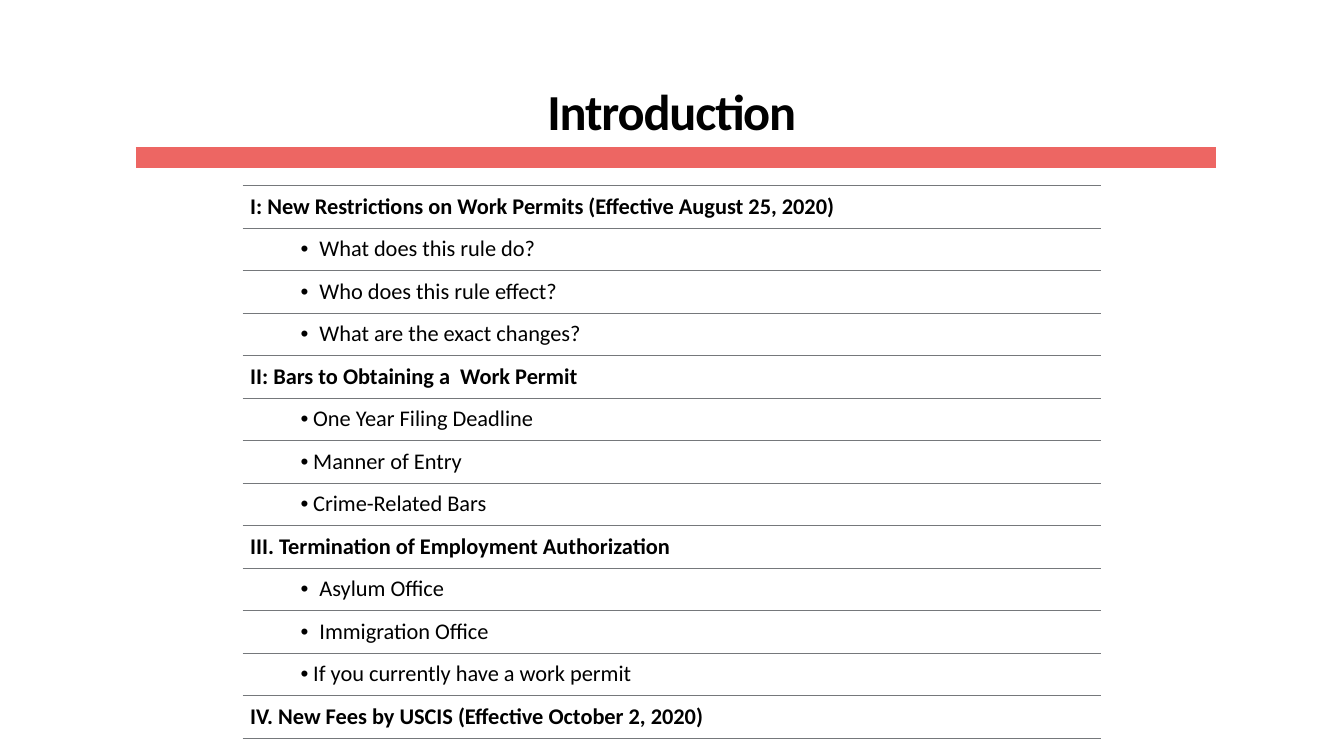
from lxml import etree
from pptx import Presentation
from pptx.dml.color import RGBColor
from pptx.enum.shapes import MSO_CONNECTOR
from pptx.enum.text import MSO_ANCHOR, PP_ALIGN
from pptx.oxml.ns import qn
from pptx.util import Pt

STRAIGHT = MSO_CONNECTOR.STRAIGHT
CENTER = PP_ALIGN.CENTER
MIDDLE = MSO_ANCHOR.MIDDLE
BOTTOM = MSO_ANCHOR.BOTTOM

BLACK, RED, GRAY = "000000", "ED6663", "75787B"
ROW_HEIGHT = 30.36
SIDE_MARGIN, EDGE_MARGIN = Pt(5.4), Pt(5.2)

# Agenda rows: text, then left margin and hanging indent of the bullet in points
WIDE, NARROW = (49.5, 13.5), (45, 9)
AGENDA = [
    ("I: New Restrictions on Work Permits (Effective August 25, 2020)", None),
    ("What does this rule do?", WIDE),
    ("Who does this rule effect?", WIDE),
    ("What are the exact changes?", WIDE),
    ("II: Bars to Obtaining a  Work Permit", None),
    ("One Year Filing Deadline", NARROW),
    ("Manner of Entry", NARROW),
    ("Crime-Related Bars", NARROW),
    ("III. Termination of Employment Authorization", None),
    ("Asylum Office", WIDE),
    ("Immigration Office", WIDE),
    ("If you currently have a work permit", NARROW),
    ("IV. New Fees by USCIS (Effective October 2, 2020)", None),
]


def color(hex_string):
    return RGBColor.from_string(hex_string)


def write(paragraph, text, size=16, bold=False, spacing=0):
    run = paragraph.add_run()
    run.text = text
    run.font.name = "Calibri"
    run.font.size = Pt(size)
    run.font.bold = bold
    run.font.color.rgb = color(BLACK)
    if spacing:
        run.font._element.set("spc", str(round(spacing * 100)))


presentation = Presentation()
presentation.slide_width = Pt(960)
presentation.slide_height = Pt(540)
slide = presentation.slides.add_slide(presentation.slide_layouts[6])

# Title
title = slide.shapes.add_textbox(Pt(25.8), Pt(28.3), Pt(908), Pt(72.7))
frame = title.text_frame
frame.word_wrap = True
frame.vertical_anchor = BOTTOM
frame.margin_left = frame.margin_right = frame.margin_bottom = 0
frame.margin_top = Pt(3.6)
paragraph = frame.paragraphs[0]
paragraph.alignment = CENTER
paragraph.line_spacing = 0.9
write(paragraph, "Introduction", size=36, bold=True, spacing=-0.8)

# Red bar under the title
bar = slide.shapes.add_connector(STRAIGHT, Pt(97), Pt(112.5), Pt(868.7), Pt(112.5))
bar.line.color.rgb = color(RED)
bar.line.width = Pt(15.5)
etree.SubElement(bar._element.spPr, qn("a:effectLst"))

# Agenda table
table = slide.shapes.add_table(
    len(AGENDA), 2, Pt(173.3), Pt(132.3), Pt(613.2), Pt(ROW_HEIGHT * len(AGENDA))
).table
table.first_row = False
table.horz_banding = False
table.columns[0].width = Pt(450)
table.columns[1].width = Pt(163.2)

for row, (text, indent) in zip(table.rows, AGENDA):
    row.height = Pt(ROW_HEIGHT)
    for cell in row.cells:
        properties = cell._tc.get_or_add_tcPr()
        # Thin rules above and below, none at the sides
        for side in ("lnL", "lnR"):
            etree.SubElement(etree.SubElement(properties, qn(f"a:{side}")), qn("a:noFill"))
        for side in ("lnT", "lnB"):
            border = etree.SubElement(properties, qn(f"a:{side}"), w=str(Pt(0.25)))
            fill = etree.SubElement(border, qn("a:solidFill"))
            etree.SubElement(fill, qn("a:srgbClr"), val=GRAY)
        cell.fill.background()

    # Only the first column holds text
    cell = row.cells[0]
    cell.vertical_anchor = MIDDLE
    cell.margin_left = cell.margin_right = SIDE_MARGIN
    cell.margin_top = cell.margin_bottom = EDGE_MARGIN
    paragraph = cell.text_frame.paragraphs[0]
    paragraph.space_before = Pt(3)
    write(paragraph, text, bold=indent is None)
    if indent:
        left, hanging = indent
        paragraph.level = 1
        bullet_properties = paragraph._p.get_or_add_pPr()
        bullet_properties.set("marL", str(Pt(left)))
        bullet_properties.set("indent", str(-Pt(hanging)))
        etree.SubElement(bullet_properties, qn("a:buFont"), typeface="Arial")
        etree.SubElement(bullet_properties, qn("a:buChar"), char="•")

presentation.save("out.pptx")
